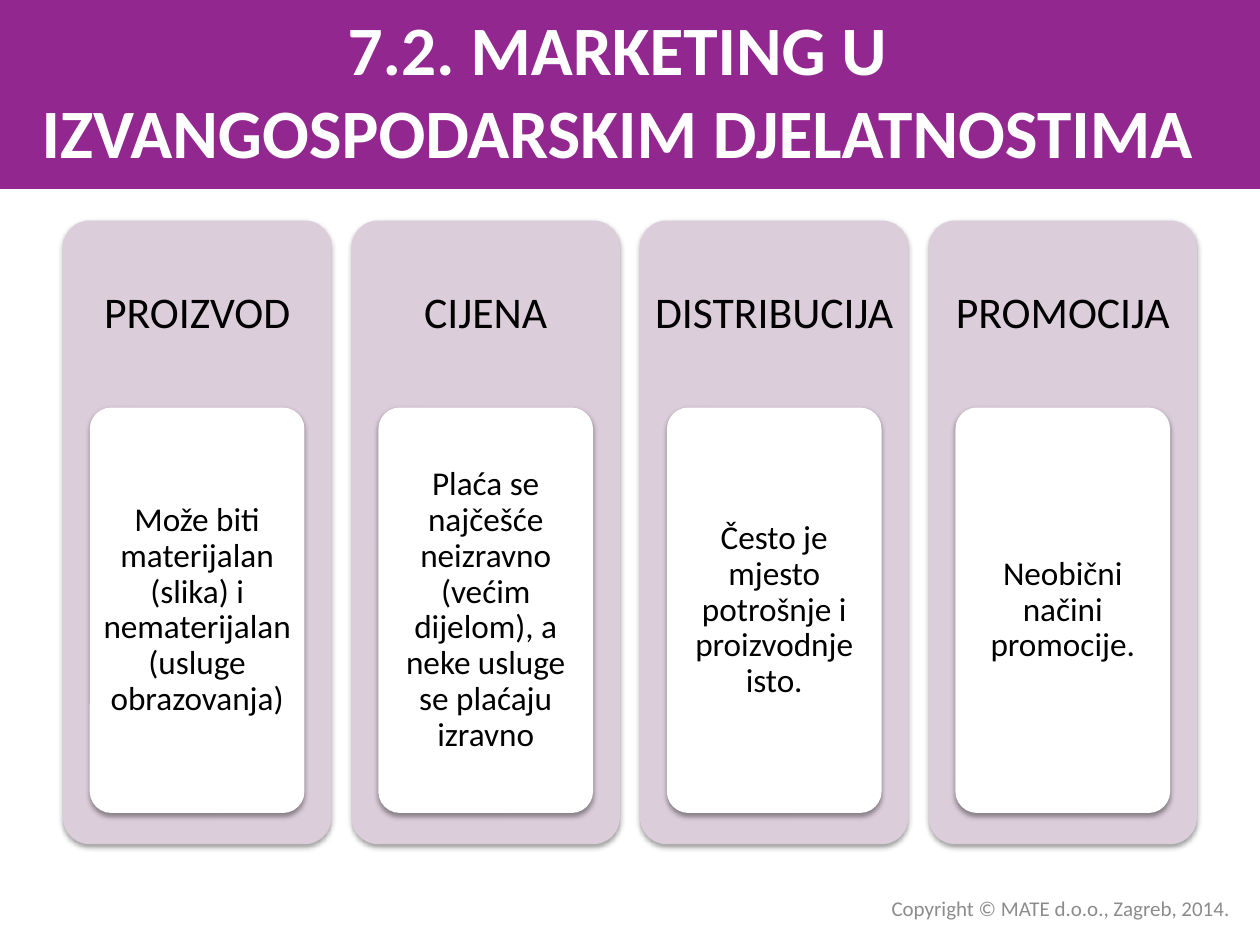
from dataclasses import dataclass

from lxml.etree import SubElement
from pptx import Presentation
from pptx.dml.color import RGBColor
from pptx.enum.shapes import MSO_SHAPE
from pptx.enum.text import MSO_ANCHOR, PP_ALIGN
from pptx.oxml.ns import qn
from pptx.shapes.autoshape import Shape
from pptx.slide import Slide
from pptx.util import Inches, Pt

COLORS = {
    "banner": "92278F",
    "column": "DCCDDB",
    "card": "FFFFFF",
    "title": "FFFFFF",
    "text": "000000",
    "footer": "8C8C8C",
    "shadow": "000000",
}
FONT = "Calibri"
WIDTH, HEIGHT = 10, 7.5

# Column grid, in inches
LEFT, TOP = 0.5, 1.75
PITCH = 2.29
COLUMN_WIDTH, COLUMN_HEIGHT = 2.13, 4.95
HEADING_SHARE, CARD_SHARE = 0.3, 0.65  # of the column height
CARD_WIDTH_SHARE = 0.8  # of the column width
CARD_PADDING = 0.05


@dataclass(frozen=True)
class Area:
    left: float
    top: float
    width: float
    height: float

    def inches(self) -> tuple:
        return tuple(Inches(n) for n in (self.left, self.top, self.width, self.height))

    def inset(self, margin: float) -> "Area":
        return Area(self.left + margin, self.top + margin,
                    self.width - 2 * margin, self.height - 2 * margin)


@dataclass(frozen=True)
class TextStyle:
    size: float
    color: str
    align: PP_ALIGN = PP_ALIGN.CENTER
    bold: bool = False
    line_spacing: float = 1.0
    margins: tuple[float, float] = (0.1, 0.05)  # horizontal, vertical


@dataclass(frozen=True)
class MarketingElement:
    heading: str
    description: str


TITLE = TextStyle(39.6, "title", bold=True)
HEADING = TextStyle(25, "text", line_spacing=0.9, margins=(0.1, 0.1))
DESCRIPTION = TextStyle(19, "text", line_spacing=0.9, margins=(0.05, 0.04))
FOOTER = TextStyle(12, "footer", align=PP_ALIGN.RIGHT)

ELEMENTS = [
    MarketingElement(
        "PROIZVOD",
        "Može biti materijalan (slika) i nematerijalan (usluge obrazovanja)"),
    MarketingElement(
        "CIJENA",
        "Plaća se najčešće neizravno (većim dijelom), a neke usluge se plaćaju izravno"),
    MarketingElement("DISTRIBUCIJA", "Često je mjesto potrošnje i proizvodnje isto."),
    MarketingElement("PROMOCIJA", "Neobični načini promocije."),
]


def add_panel(page: Slide, kind: MSO_SHAPE, area: Area, color: str) -> Shape:
    panel = page.shapes.add_shape(kind, *area.inches())
    panel.shadow.inherit = False
    panel.fill.solid()
    panel.fill.fore_color.rgb = RGBColor.from_string(COLORS[color])
    panel.line.fill.background()
    return panel


def add_rounded_panel(page: Slide, area: Area, color: str) -> None:
    """Draw a rounded panel with a soft shadow below it."""
    panel = add_panel(page, MSO_SHAPE.ROUNDED_RECTANGLE, area, color)
    panel.adjustments[0] = 0.1
    effects = panel._element.spPr.find(qn("a:effectLst"))
    shadow = SubElement(effects, qn("a:outerShdw"), blurRad=str(Pt(3.1)),
                        dist=str(Pt(1.6)), dir="5400000", rotWithShape="0")
    tint = SubElement(shadow, qn("a:srgbClr"), val=COLORS["shadow"])
    SubElement(tint, qn("a:alpha"), val="38000")


def add_text(page: Slide, area: Area, text: str, style: TextStyle) -> None:
    frame = page.shapes.add_textbox(*area.inches()).text_frame
    frame.word_wrap = True
    frame.vertical_anchor = MSO_ANCHOR.MIDDLE
    horizontal, vertical = (Inches(n) for n in style.margins)
    frame.margin_left = frame.margin_right = horizontal
    frame.margin_top = frame.margin_bottom = vertical
    frame.text = text
    para = frame.paragraphs[0]
    para.alignment = style.align
    para.line_spacing = style.line_spacing
    font = para.runs[0].font
    font.name = FONT
    font.size = Pt(style.size)
    font.bold = style.bold
    font.color.rgb = RGBColor.from_string(COLORS[style.color])


def add_column(page: Slide, index: int, element: MarketingElement) -> None:
    column = Area(LEFT + index * PITCH, TOP, COLUMN_WIDTH, COLUMN_HEIGHT)
    heading = Area(column.left, column.top, column.width, HEADING_SHARE * column.height)
    card_width = CARD_WIDTH_SHARE * column.width
    card = Area(column.left + (column.width - card_width) / 2,
                heading.top + heading.height,
                card_width, CARD_SHARE * column.height)
    add_rounded_panel(page, column, "column")
    add_text(page, heading, element.heading, HEADING)
    add_rounded_panel(page, card, "card")
    add_text(page, card.inset(CARD_PADDING), element.description, DESCRIPTION)


def main() -> None:
    deck = Presentation()
    deck.slide_width, deck.slide_height = Inches(WIDTH), Inches(HEIGHT)
    page = deck.slides.add_slide(deck.slide_layouts[6])
    add_panel(page, MSO_SHAPE.RECTANGLE, Area(0, 0, WIDTH, HEIGHT / 5), "banner")
    for index, element in enumerate(ELEMENTS):
        add_column(page, index, element)
    add_text(page, Area(0, 0.08, 9.8, 1.25),
             "7.2. MARKETING U IZVANGOSPODARSKIM DJELATNOSTIMA", TITLE)
    add_text(page, Area(4.69, 7.06, 5.17, 0.3),
             "Copyright © MATE d.o.o., Zagreb, 2014.", FOOTER)
    deck.save("out.pptx")


if __name__ == "__main__":
    main()
